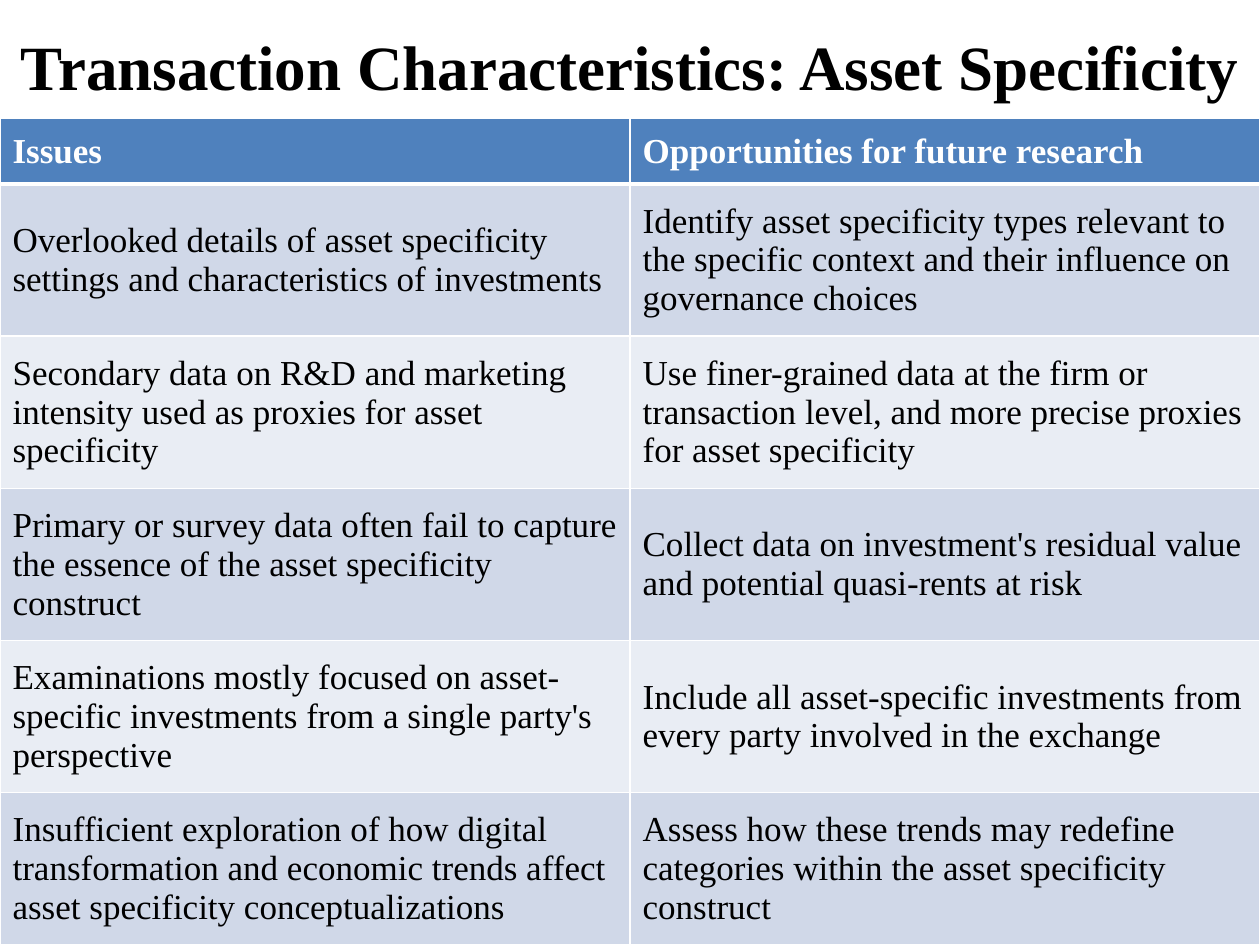
from lxml.etree import SubElement
from pptx import Presentation
from pptx.dml.color import RGBColor
from pptx.enum.text import MSO_ANCHOR, MSO_AUTO_SIZE, PP_ALIGN
from pptx.oxml.ns import qn
from pptx.util import Inches, Pt

THEME = {
    "font": "Times New Roman",
    "title": {"size": Pt(36), "bold": True, "color": "000000"},
    "header": {"size": Pt(20), "bold": True, "color": "FFFFFF"},
    "body": {"size": Pt(20), "bold": False, "color": "000000"},
    "header_fill": "4F81BD",
    "bands": ("D0D8E8", "E9EDF4"),
    "rule": "FFFFFF",
}

ROWS = [
    ("Issues", "Opportunities for future research"),
    ("Overlooked details of asset specificity settings and characteristics of investments",
     "Identify asset specificity types relevant to the specific context and their influence on governance choices"),
    ("Secondary data on R&D and marketing intensity used as proxies for asset specificity",
     "Use finer-grained data at the firm or transaction level, and more precise proxies for asset specificity"),
    ("Primary or survey data often fail to capture the essence of the asset specificity construct",
     "Collect data on investment's residual value and potential quasi-rents at risk"),
    ("Examinations mostly focused on asset-specific investments from a single party's perspective",
     "Include all asset-specific investments from every party involved in the exchange"),
    ("Insufficient exploration of how digital transformation and economic trends affect asset specificity conceptualizations",
     "Assess how these trends may redefine categories within the asset specificity construct"),
]


def write_text(paragraph, text, style):
    run = paragraph.add_run()
    run.text = text
    run.font.name = THEME["font"]
    run.font.color.rgb = RGBColor.from_string(style["color"])
    for name in ("size", "bold"):
        setattr(run.font, name, style[name])


def add_borders(cell, widths):
    properties = cell._tc.get_or_add_tcPr()
    for side, width in widths.items():
        line = SubElement(properties, qn(f"a:ln{side}"), w=str(Pt(width)))
        fill = SubElement(line, qn("a:solidFill"))
        SubElement(fill, qn("a:srgbClr"), val=THEME["rule"])


presentation = Presentation()
presentation.slide_width, presentation.slide_height = Inches(10), Inches(7.5)
slide = presentation.slides.add_slide(presentation.slide_layouts[5])

# Vertical layout: title band, header row, then equal body rows
width = presentation.slide_width
table_top = Inches(0.94)
table_height = presentation.slide_height - table_top
header_height = Inches(0.52)
body_height = (table_height - header_height) // (len(ROWS) - 1)

# Title
title = slide.shapes.title
title_top = Inches(0.09)
title_format = {"left": 0, "top": title_top, "width": width, "height": table_top - title_top}
for name, value in title_format.items():
    setattr(title, name, value)
frame = title.text_frame
frame_format = {"word_wrap": True, "auto_size": MSO_AUTO_SIZE.NONE,
                "vertical_anchor": MSO_ANCHOR.MIDDLE}
for name, value in frame_format.items():
    setattr(frame, name, value)
frame.paragraphs[0].alignment = PP_ALIGN.CENTER
write_text(frame.paragraphs[0], "Transaction Characteristics: Asset Specificity", THEME["title"])

# Table of issues and opportunities
table = slide.shapes.add_table(len(ROWS), 2, 0, table_top, width, table_height).table
for row_index, texts in enumerate(ROWS):
    is_header = row_index == 0
    table.rows[row_index].height = header_height if is_header else body_height
    fill_color = THEME["header_fill"] if is_header else THEME["bands"][(row_index - 1) % 2]
    borders = {"L": 1, "R": 1, "T": 3 if row_index == 1 else 1, "B": 3 if is_header else 1}
    for column_index, text in enumerate(texts):
        cell = table.cell(row_index, column_index)
        cell.vertical_anchor = MSO_ANCHOR.MIDDLE
        add_borders(cell, borders)
        cell.fill.solid()
        cell.fill.fore_color.rgb = RGBColor.from_string(fill_color)
        write_text(cell.text_frame.paragraphs[0], text, THEME["header" if is_header else "body"])

presentation.save("out.pptx")
